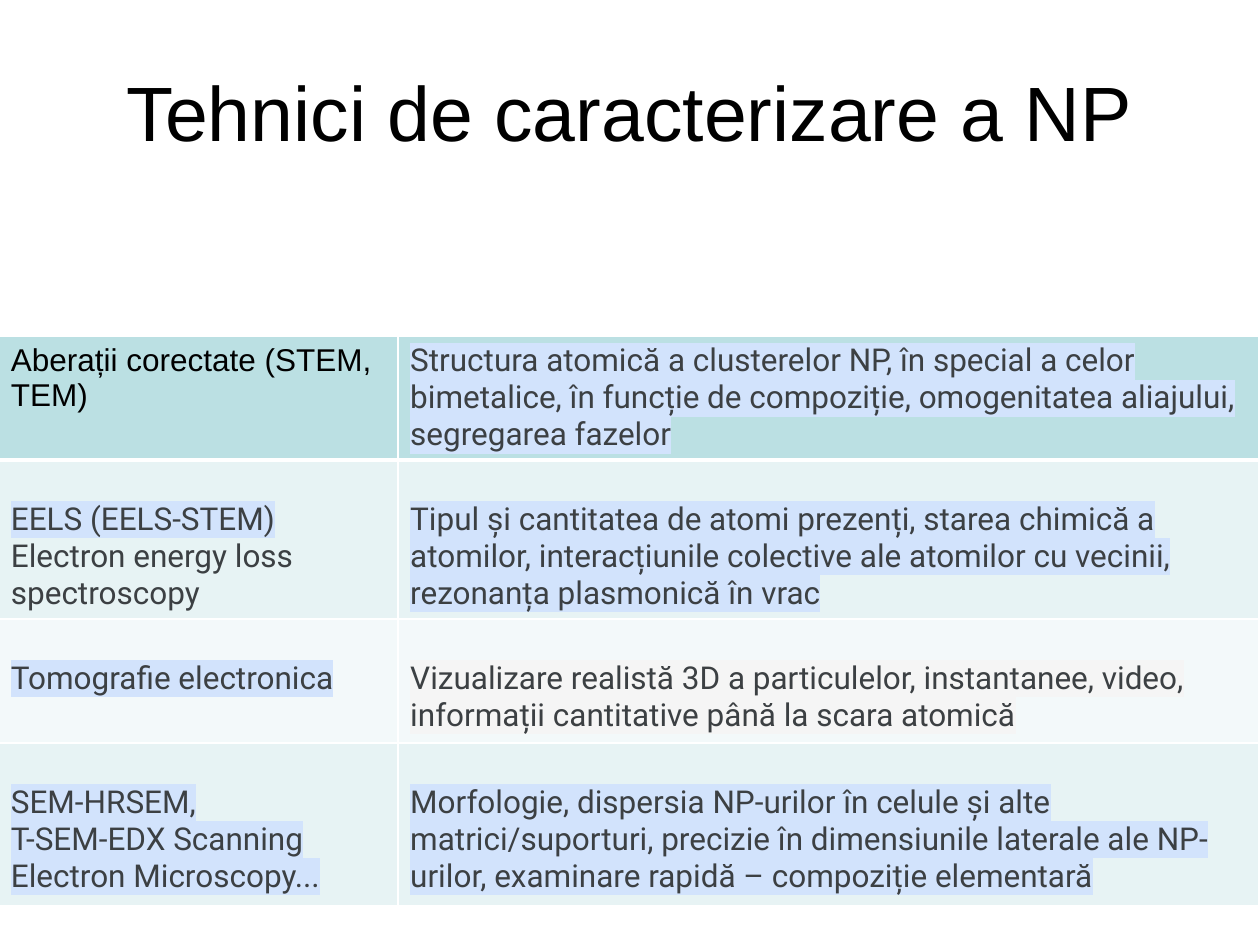
from dataclasses import dataclass
from typing import Optional

from lxml import etree
from pptx import Presentation
from pptx import util as u
from pptx.dml import color
from pptx.enum import text
from pptx.oxml import ns


@dataclass(frozen=True)
class Theme:
    black: str = "000000"
    white: str = "FFFFFF"
    ink: str = "3C4043"
    mark: str = "D2E3FC"
    pale: str = "F5F5F5"
    head: str = "BBE0E3"
    band: str = "E7F3F4"
    light: str = "F3F9FA"
    sans: str = "Arial"
    body: str = "Roboto"
    big: int = 44
    small: int = 18


T = Theme()


@dataclass(frozen=True)
class Run:
    words: str
    mark: Optional[str] = T.mark
    ink: str = T.ink
    face: str = T.body


@dataclass(frozen=True)
class Row:
    high: float
    fill: str
    cells: tuple[list[list[Run]], list[list[Run]]]
    top: float = 0.83
    rule: int = 1


WIDE = (8.05, 17.35)
ROWS = [
    Row(2.48, T.head, (
        [[Run("Aberații corectate (STEM, TEM)", None, T.black, T.sans)]],
        [[Run("Structura atomică a clusterelor NP, în special a celor bimetalice, "
              "în funcție de compoziție, omogenitatea aliajului, segregarea fazelor")]],
    ), top=0.13, rule=3),
    Row(3.2, T.band, (
        [[Run("EELS (EELS-STEM)"), Run(" Electron energy loss spectroscopy", None)]],
        [[Run("Tipul și cantitatea de atomi prezenți, starea chimică a atomilor, "
              "interacțiunile colective ale atomilor cu vecinii, rezonanța plasmonică în vrac")]],
    )),
    Row(2.5, T.light, (
        [[Run("Tomografie electronica")]],
        [[Run("Vizualizare realistă 3D a particulelor, instantanee, video, "
              "informații cantitative până la scara atomică", T.pale)]],
    )),
    Row(3.28, T.band, (
        [[Run("SEM-HRSEM,")], [Run("T-SEM-EDX Scanning Electron Microscopy...")]],
        [[Run("Morfologie, dispersia NP-urilor în celule și alte matrici/suporturi, "
              "precizie în dimensiunile laterale ale NP-urilor, "
              "examinare rapidă – compoziție elementară")]],
    )),
]


def apply(item, look: dict) -> None:
    for key, value in look.items():
        setattr(item, key, value)


def tint(node, tag: str, shade: str):
    item = etree.SubElement(node, ns.qn(tag))
    etree.SubElement(item, ns.qn("a:srgbClr"), val=shade)
    return item


def write(para, part: Run, size: int = T.small) -> None:
    run = para.add_run()
    run.text = part.words
    apply(run.font, {"size": u.Pt(size), "name": part.face, "bold": False})
    run.font.color.rgb = color.RGBColor.from_string(part.ink)
    if part.mark:
        props = run.font._element
        props.find(ns.qn("a:solidFill")).addnext(tint(props, "a:highlight", part.mark))


def edge(cell, sides: dict[str, int]) -> None:
    props = cell._tc.get_or_add_tcPr()
    for spot, (side, width) in enumerate(sides.items()):
        line = etree.Element(ns.qn(f"a:ln{side}"), w=str(u.Pt(width)))
        tint(line, "a:solidFill", T.white)
        props.insert(spot, line)


def fill(cell, row: Row, paras: list[list[Run]], above: int) -> None:
    apply(cell, {
        "margin_left": u.Cm(0.25), "margin_right": u.Cm(0.25),
        "margin_top": u.Cm(row.top), "margin_bottom": u.Cm(0.13),
        "vertical_anchor": text.MSO_ANCHOR.TOP,
    })
    cell.fill.solid()
    cell.fill.fore_color.rgb = color.RGBColor.from_string(row.fill)
    edge(cell, {"L": 1, "R": 1, "T": above, "B": row.rule})
    frame = cell.text_frame
    for spot, parts in enumerate(paras):
        para = frame.add_paragraph() if spot else frame.paragraphs[0]
        for part in parts:
            write(para, part)


def title(slide, words: str) -> None:
    box = slide.shapes.title
    apply(box, {"left": u.Cm(1.27), "top": u.Cm(0.64),
                "width": u.Cm(22.86), "height": u.Cm(3.18)})
    apply(box.text_frame, {"vertical_anchor": text.MSO_ANCHOR.MIDDLE, "word_wrap": True})
    para = box.text_frame.paragraphs[0]
    para.alignment = text.PP_ALIGN.CENTER
    write(para, Run(words, None, T.black, T.sans), T.big)


def grid(slide, rows: list[Row]) -> None:
    table = slide.shapes.add_table(
        len(rows), len(WIDE), u.Cm(-0.03), u.Cm(6.78),
        u.Cm(sum(WIDE)), u.Cm(sum(row.high for row in rows))).table
    apply(table, {"first_row": False, "horz_banding": False})
    for col, width in zip(table.columns, WIDE):
        col.width = u.Cm(width)
    above = 1
    for line, row in zip(table.rows, rows):
        line.height = u.Cm(row.high)
        for cell, paras in zip(line.cells, row.cells):
            fill(cell, row, paras, above)
        above = row.rule


def main() -> None:
    deck = Presentation()
    apply(deck, {"slide_width": u.Cm(25.4), "slide_height": u.Cm(19.05)})
    slide = deck.slides.add_slide(deck.slide_layouts[5])
    title(slide, "Tehnici de caracterizare a NP")
    grid(slide, ROWS)
    deck.save("out.pptx")


if __name__ == "__main__":
    main()
